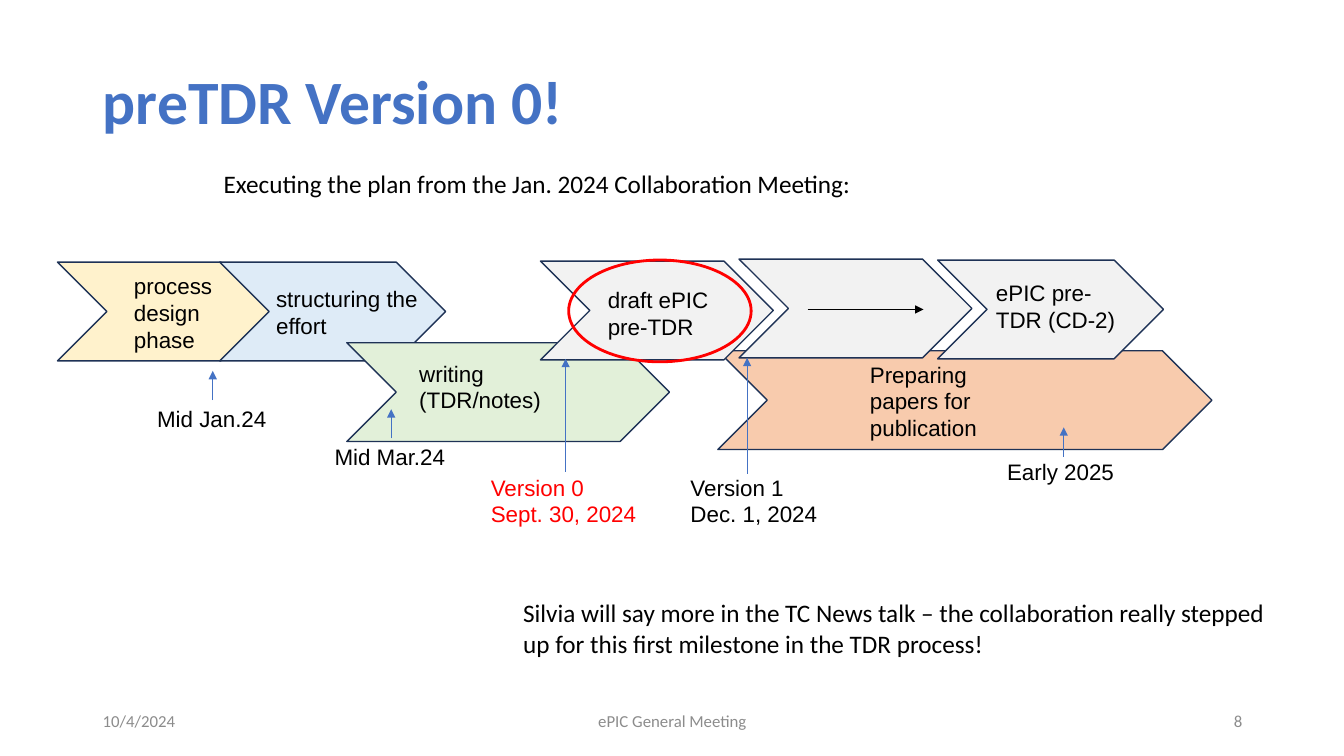
import pptx
import pptx.util
import pptx.dml.color
import pptx.enum.shapes
import pptx.enum.text
import pptx.oxml.ns
import lxml.etree
from dataclasses import dataclass

Inches = pptx.util.Inches
Shapes = pptx.enum.shapes.MSO_SHAPE
Align = pptx.enum.text.PP_ALIGN
Anchor = pptx.enum.text.MSO_ANCHOR
AutoSize = pptx.enum.text.MSO_AUTO_SIZE


@dataclass(frozen=True)
class Theme:
    accent: str = "4472C4"
    outline: str = "1E3256"
    black: str = "000000"
    red: str = "FF0000"
    muted: str = "8C8C8C"
    yellow: str = "FFF2CC"
    blue: str = "DEEBF7"
    green: str = "E2F0D9"
    orange: str = "F8CBAD"
    grey: str = "F2F2F2"
    heading_font: str = "Calibri"
    label_font: str = "Arial"
    title_size: int = 44
    body_size: int = 18
    label_size: int = 16
    footer_size: int = 12


def rgb(color):
    return pptx.dml.color.RGBColor.from_string(color)


def apply(target, values):
    for name, value in values.items():
        setattr(target, name, value)


class TimelineSlide:
    def __init__(self, slide, theme):
        self.slide = slide
        self.theme = theme

    def add_lines(self, frame, lines, font, size, color, bold=False, **para_format):
        for index, line in enumerate(lines):
            para = frame.paragraphs[0] if index == 0 else frame.add_paragraph()
            apply(para, para_format)
            span = para.add_run()
            span.text = line
            apply(span.font, {"name": font, "size": pptx.util.Pt(size), "bold": bold})
            span.font.color.rgb = rgb(color)

    def title(self, text, left, top, width, height):
        box = self.slide.shapes.title
        apply(box, {"left": Inches(left), "top": Inches(top),
                    "width": Inches(width), "height": Inches(height)})
        apply(box.text_frame, {"vertical_anchor": Anchor.MIDDLE, "word_wrap": True,
                               "auto_size": AutoSize.NONE})
        self.add_lines(box.text_frame, [text], self.theme.heading_font, self.theme.title_size,
                       self.theme.accent, bold=True, alignment=Align.LEFT, line_spacing=0.9)

    def text(self, lines, left, top, width, height, font, size, color,
             align=Align.LEFT, anchor=Anchor.TOP):
        box = self.slide.shapes.add_textbox(
            Inches(left), Inches(top), Inches(width), Inches(height))
        apply(box.text_frame, {"word_wrap": True, "vertical_anchor": anchor})
        self.add_lines(box.text_frame, lines, font, size, color, alignment=align)

    def body(self, text, left, top, width, height):
        self.text([text], left, top, width, height, self.theme.heading_font,
                  self.theme.body_size, self.theme.black)

    def footer(self, text, left, width, align):
        self.text([text], left, 6.95, width, 0.4, self.theme.heading_font,
                  self.theme.footer_size, self.theme.muted, align, Anchor.MIDDLE)

    def label(self, lines, left, top, width, height, color=None):
        self.text(lines, left, top, width, height, self.theme.label_font,
                  self.theme.label_size, color or self.theme.black)

    def shape(self, kind, left, top, width, height, line_color, line_width, fill=None):
        shape = self.slide.shapes.add_shape(
            kind, Inches(left), Inches(top), Inches(width), Inches(height))
        shape.shadow.inherit = False
        if fill:
            shape.fill.solid()
            shape.fill.fore_color.rgb = rgb(fill)
        else:
            shape.fill.background()
        shape.line.color.rgb = rgb(line_color)
        shape.line.width = pptx.util.Pt(line_width)

    def stage(self, left, top, width, fill):
        self.shape(Shapes.CHEVRON, left, top, width, 0.98, self.theme.outline, 1, fill)

    def highlight(self, left, top, width, height):
        self.shape(Shapes.OVAL, left, top, width, height, self.theme.red, 2)

    def arrow(self, start, end, color):
        connector = self.slide.shapes.add_connector(
            pptx.enum.shapes.MSO_CONNECTOR.STRAIGHT,
            *(Inches(value) for value in (*start, *end)))
        connector.line.color.rgb = rgb(color)
        connector.line.width = pptx.util.Pt(0.5)
        qn = pptx.oxml.ns.qn
        properties = connector.element.spPr
        lxml.etree.SubElement(properties.find(qn("a:ln")), qn("a:tailEnd"), type="triangle")
        lxml.etree.SubElement(properties, qn("a:effectLst"))

    def milestone(self, lines, box, arrow_x, arrow_bottom, arrow_top, color=None):
        self.label(lines, *box, color=color)
        self.arrow((arrow_x, arrow_bottom), (arrow_x, arrow_top), self.theme.accent)


def main():
    theme = Theme()
    deck = pptx.Presentation()
    apply(deck, {"slide_width": Inches(13.33), "slide_height": Inches(7.5)})
    page = TimelineSlide(deck.slides.add_slide(deck.slide_layouts[5]), theme)

    page.title("preTDR Version 0!", 0.92, 0.4, 11.5, 1.28)
    page.body("Executing the plan from the Jan. 2024 Collaboration Meeting:",
              2.12, 1.62, 7.61, 0.4)

    stages = [
        (7.12, 3.48, 4.9, theme.orange),
        (7.33, 2.57, 2.31, theme.grey),
        (0.57, 2.6, 2.11, theme.yellow),
        (2.18, 2.6, 2.24, theme.blue),
        (3.44, 3.4, 3.2, theme.green),
        (5.36, 2.59, 2.31, theme.grey),
        (9.3, 2.58, 2.24, theme.grey),
    ]
    for stage in stages:
        page.stage(*stage)

    stage_labels = [
        (["process design phase"], 1.23, 2.65, 1.45, 0.87),
        (["structuring the", "effort"], 2.64, 2.78, 1.76, 0.64),
        (["writing", "(TDR/notes)"], 4.06, 3.52, 1.76, 0.64),
        (["draft ePIC pre-TDR"], 5.93, 2.79, 1.31, 0.64),
        (["Preparing papers for", "publication"], 8.53, 3.53, 1.76, 0.87),
        (["ePIC pre-TDR (CD-2)"], 9.78, 2.72, 1.42, 0.64),
    ]
    for label in stage_labels:
        page.label(*label)

    milestones = [
        (["Mid Jan.24"], (1.46, 3.97, 1.31, 0.35), 2.11, 3.97, 3.68),
        (["Mid Mar.24"], (3.22, 4.35, 1.31, 0.35), 3.88, 4.35, 4.06),
        (["Version 0", "Sept. 30, 2024"], (4.77, 4.65, 1.83, 0.64), 5.61, 4.68, 3.56, theme.red),
        (["Version 1", "Dec. 1, 2024"], (6.75, 4.65, 1.69, 0.64), 7.41, 4.7, 3.55),
        (["Early 2025"], (9.89, 4.5, 1.81, 0.37), 10.55, 4.53, 4.24),
    ]
    for milestone in milestones:
        page.milestone(*milestone)

    page.arrow((8.01, 3.07), (9.16, 3.07), theme.black)
    page.highlight(5.64, 2.58, 1.81, 1.01)

    page.body("Silvia will say more in the TC News talk – the collaboration really stepped "
              "up for this first milestone in the TDR process!", 5.09, 5.88, 7.65, 0.71)
    page.footer("10/4/2024", 0.92, 3, Align.LEFT)
    page.footer("ePIC General Meeting", 4.42, 4.5, Align.CENTER)
    page.footer("8", 9.42, 3, Align.RIGHT)

    deck.save("out.pptx")


if __name__ == "__main__":
    main()
